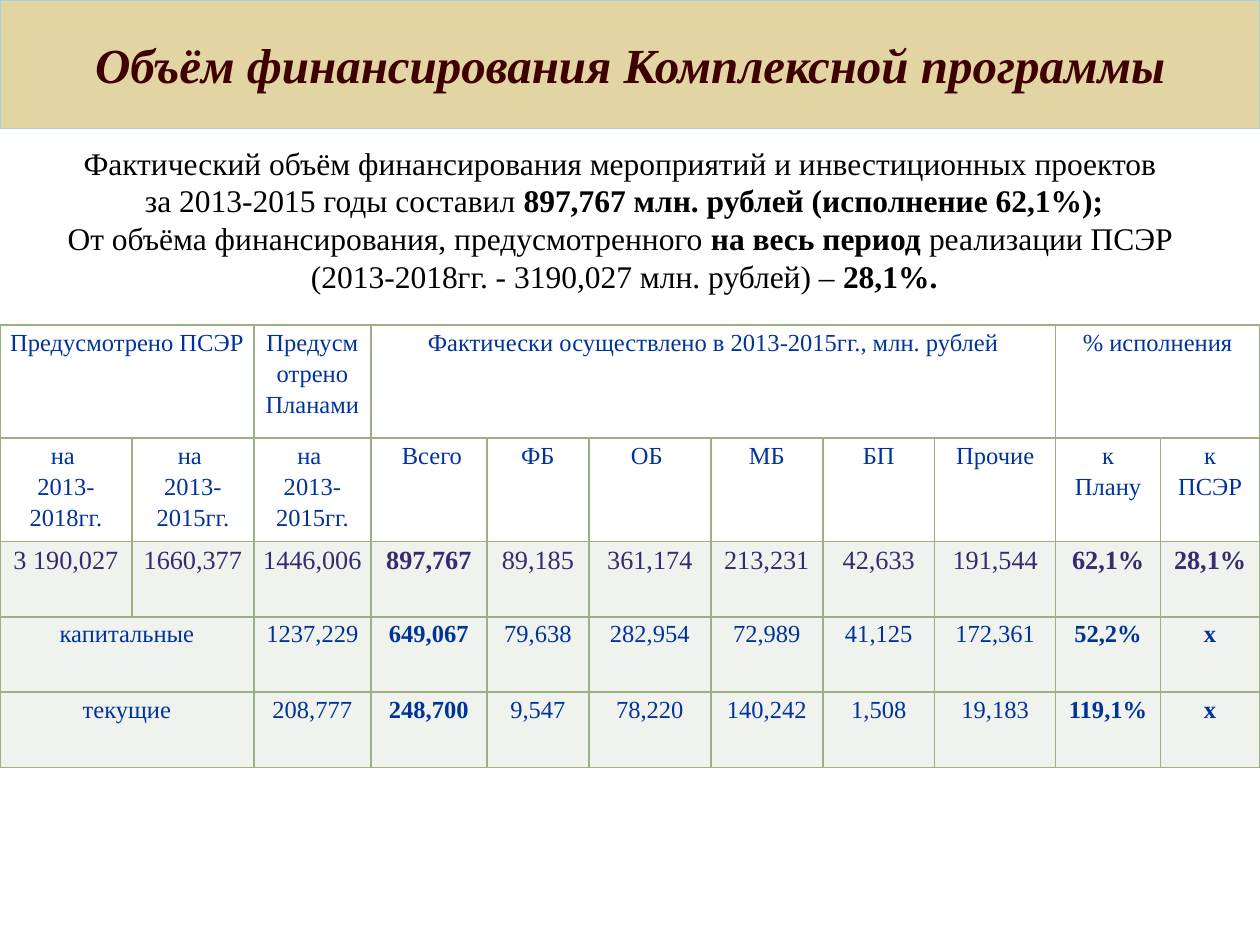
from dataclasses import dataclass

from lxml import etree
from pptx import Presentation
from pptx import util as u
from pptx.dml.color import RGBColor
from pptx.enum import text
from pptx.oxml import ns


@dataclass(frozen=True)
class Theme:
    font: str = "Times New Roman"
    banner: str = "E2D5A3"
    banner_line: str = "A6D0DF"
    title: str = "3E0000"
    body: str = "000000"
    label: str = "003399"
    total: str = "382971"
    head_fill: str = "FFFFFF"
    data_fill: str = "EFF2ED"
    border: str = "9CB084"
    title_size: int = 28
    body_size: int = 18
    label_size: int = 14
    total_size: int = 15


TITLE = "Объём финансирования Комплексной программы"
SUMMARY = [
    [("Фактический объём финансирования мероприятий и инвестиционных проектов ", False)],
    [("за 2013-2015 годы составил ", False),
     ("897,767 млн. рублей (исполнение 62,1%);", True)],
    [("От объёма финансирования, предусмотренного ", False),
     ("на весь период ", True), ("реализации ПСЭР ", False)],
    [("(2013-2018гг. - 3190,027 млн. рублей) – ", False), ("28,1%.", True)],
]
ROWS = [
    ["Предусмотрено ПСЭР", None, "Предусмотрено Планами",
     "Фактически осуществлено в 2013-2015гг., млн. рублей",
     None, None, None, None, None, "% исполнения", None],
    ["на \n2013-2018гг.", "на \n2013-2015гг.", "на \n2013-2015гг.", " Всего",
     "ФБ", "ОБ ", "МБ", "БП", "Прочие", "к\nПлану", "к ПСЭР"],
    ["3 190,027", "1660,377", "1446,006", "897,767", "89,185", "361,174",
     "213,231", "42,633", "191,544", "62,1%", "28,1%"],
    ["капитальные", None, "1237,229", "649,067", "79,638", "282,954",
     "72,989", "41,125", "172,361", "52,2%", "х"],
    ["текущие", None, "208,777", "248,700", "9,547", "78,220",
     "140,242", "1,508", "19,183", "119,1%", "х"],
]
COL_WIDTHS = [75.4, 69.7, 66.9, 66.3, 58.3, 69.7, 64, 64, 69.1, 60, 56.6]
ROW_HEIGHTS = [64.6, 59.2, 43, 43, 43]
HEAD_ROWS = 2
TOTAL_ROW = 2
BOLD_COLS = {3, 9, 10}


class Deck:
    """Hold the theme and the current slide, and add styled elements to it."""

    def __init__(self, prs, theme):
        self.theme = theme
        self.s = prs.slides.add_slide(prs.slide_layouts[5])

    def style(self, r, size, color, bold=False, italic=False):
        r.font.name = self.theme.font
        r.font.size = u.Pt(size)
        r.font.color.rgb = RGBColor.from_string(color)
        r.font.bold = bold
        r.font.italic = italic

    def place(self, sp, left, top, width, height):
        sp.left, sp.top, sp.width, sp.height = map(u.Pt, (left, top, width, height))

    def title(self, words, *box):
        t, sp = self.theme, self.s.shapes.title
        self.place(sp, *box)
        sp.fill.solid()
        sp.fill.fore_color.rgb = RGBColor.from_string(t.banner)
        sp.line.color.rgb = RGBColor.from_string(t.banner_line)
        sp.line.width = u.Pt(0.75)
        tf = sp.text_frame
        tf.text = words
        tf.auto_size = text.MSO_AUTO_SIZE.NONE
        tf.vertical_anchor = text.MSO_ANCHOR.MIDDLE
        p = tf.paragraphs[0]
        p.alignment = text.PP_ALIGN.CENTER
        self.style(p.runs[0], t.title_size, t.title, True, True)

    def paragraphs(self, lines, *box):
        tf = self.s.shapes.add_textbox(*map(u.Pt, box)).text_frame
        tf.word_wrap = True
        tf.auto_size = text.MSO_AUTO_SIZE.SHAPE_TO_FIT_TEXT
        tf.text = "\n".join("" for _ in lines)
        for p, pieces in zip(tf.paragraphs, lines):
            p.alignment = text.PP_ALIGN.CENTER
            for words, bold in pieces:
                r = p.add_run()
                r.text = words
                self.style(r, self.theme.body_size, self.theme.body, bold)

    def borders(self, cell):
        pr = cell._tc.get_or_add_tcPr()
        for i, side in enumerate(("lnL", "lnR", "lnT", "lnB")):
            ln = etree.Element(ns.qn(f"a:{side}"), w=str(u.Pt(1)))
            fill = etree.SubElement(ln, ns.qn("a:solidFill"))
            etree.SubElement(fill, ns.qn("a:srgbClr"), val=self.theme.border)
            pr.insert(i, ln)

    def cell(self, cell, words, fill, size, color, bold):
        cell.margin_left = cell.margin_right = u.Pt(5)
        cell.margin_top = cell.margin_bottom = 0
        cell.fill.solid()
        cell.fill.fore_color.rgb = RGBColor.from_string(fill)
        self.borders(cell)
        if words is None:
            return
        cell.text_frame.text = words
        for p in cell.text_frame.paragraphs:
            p.alignment = text.PP_ALIGN.CENTER
            p.line_spacing = 1.15
            for r in p.runs:
                self.style(r, size, color, bold)

    def table(self, rows, widths, heights, left, top):
        t = self.theme
        box = map(u.Pt, (left, top, sum(widths), sum(heights)))
        tbl = self.s.shapes.add_table(len(rows), len(widths), *box).table
        for col, width in zip(tbl.columns, widths):
            col.width = u.Pt(width)
        for i, row in enumerate(rows):
            tbl.rows[i].height = u.Pt(heights[i])
            fill = t.head_fill if i < HEAD_ROWS else t.data_fill
            total = i == TOTAL_ROW
            size = t.total_size if total else t.label_size
            color = t.total if total else t.label
            for j, words in enumerate(row):
                bold = i >= HEAD_ROWS and j in BOLD_COLS
                self.cell(tbl.cell(i, j), words, fill, size, color, bold)
            starts = [j for j, words in enumerate(row) if words is not None]
            for first, after in zip(starts, starts[1:] + [len(row)]):
                if after - first > 1:
                    tbl.cell(i, first).merge(tbl.cell(i, after - 1))


def main():
    prs = Presentation()
    prs.slide_width, prs.slide_height = u.Pt(720), u.Pt(540)
    deck = Deck(prs, Theme())
    deck.title(TITLE, 0, 0, 720, 73.4)
    deck.table(ROWS, COL_WIDTHS, ROW_HEIGHTS, 0, 185.8)
    deck.paragraphs(SUMMARY, 16.5, 78.5, 680.4, 93.6)
    prs.save("out.pptx")


if __name__ == "__main__":
    main()
